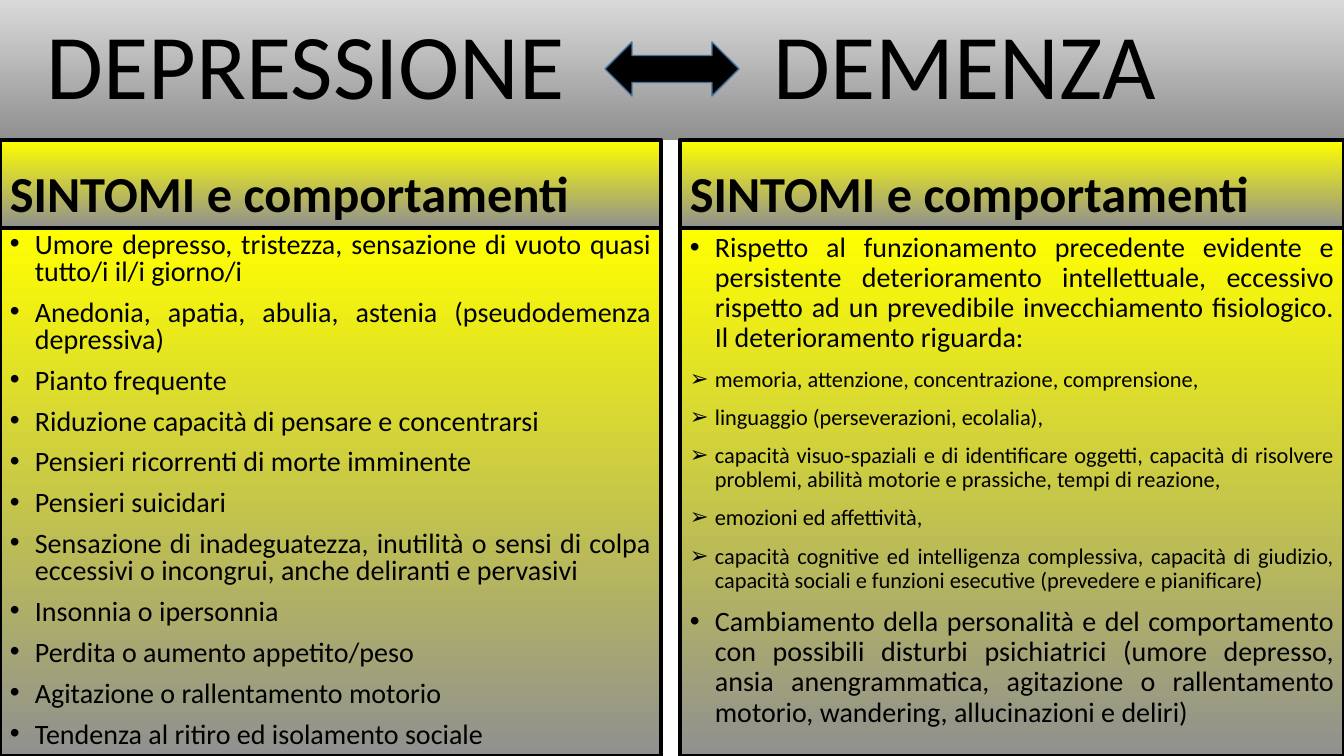
"""Build the slide that compares the symptoms of depression and dementia."""
from dataclasses import dataclass

from lxml.etree import SubElement
from pptx import Presentation
from pptx.dml.color import RGBColor
from pptx.enum.shapes import MSO_SHAPE
from pptx.enum.text import MSO_ANCHOR, MSO_AUTO_SIZE, PP_ALIGN
from pptx.oxml.ns import qn
from pptx.util import Emu, Pt

FONT = "Calibri"
BLACK = "000000"
GREY = "909090"
YELLOW = "FFFF00"
SLIDE_WIDTH, SLIDE_HEIGHT = 1344, 756
TITLE_HEIGHT = 140
HEADING_HEIGHT = 88
TITLE_START, TITLE_TAB = 47, 727
INDENT = 25


@dataclass(frozen=True)
class Item:
    """A bulleted line of a column."""

    text: str
    bullet: str = "•"
    size: int = 20


@dataclass(frozen=True)
class Column:
    """A heading with its list of items."""

    left: int
    width: int
    line_spacing: float
    items: tuple[Item, ...]
    heading: str = "SINTOMI e comportamenti"


def detail(text: str) -> Item:
    """Return a smaller item with an arrow bullet."""
    return Item(text, "➢", 16)


COLUMNS = (
    Column(0, 661, 0.8, (
        Item("Umore depresso, tristezza, sensazione di vuoto quasi tutto/i il/i giorno/i"),
        Item("Anedonia, apatia, abulia, astenia (pseudodemenza depressiva)"),
        Item("Pianto frequente"),
        Item("Riduzione capacità di pensare e concentrarsi"),
        Item("Pensieri ricorrenti di morte imminente"),
        Item("Pensieri suicidari"),
        Item("Sensazione di inadeguatezza, inutilità o sensi di colpa eccessivi "
             "o incongrui, anche deliranti e pervasivi"),
        Item("Insonnia o ipersonnia"),
        Item("Perdita o aumento appetito/peso"),
        Item("Agitazione o rallentamento motorio"),
        Item("Tendenza al ritiro ed isolamento sociale"),
    )),
    Column(680, 664, 0.9, (
        Item("Rispetto al funzionamento precedente evidente e persistente "
             "deterioramento intellettuale, eccessivo rispetto ad un prevedibile "
             "invecchiamento fisiologico. Il deterioramento riguarda:"),
        detail("memoria, attenzione, concentrazione, comprensione,"),
        detail("linguaggio (perseverazioni, ecolalia),"),
        detail("capacità visuo-spaziali e di identificare oggetti, capacità di risolvere "
               "problemi, abilità motorie e prassiche, tempi di reazione,"),
        detail("emozioni ed affettività,"),
        detail("capacità cognitive ed intelligenza complessiva, capacità di giudizio, "
               "capacità sociali e funzioni esecutive (prevedere e pianificare)"),
        Item("Cambiamento della personalità e del comportamento con possibili disturbi "
             "psichiatrici (umore depresso, ansia anengrammatica, agitazione o "
             "rallentamento motorio, wandering, allucinazioni e deliri)"),
    )),
)


def px(length: int) -> Emu:
    """Turn px into EMU."""
    return Emu(round(length * 914400 / 100.8))


def colour(value: str) -> RGBColor:
    """Turn a hex string into a colour."""
    return RGBColor.from_string(value)


def fill_gradient(shape, top: str, bottom: str) -> None:
    """Fill a shape with a gradient that runs downwards."""
    shape.fill.gradient()
    shape.fill.gradient_angle = 270
    for stop, value in zip(shape.fill.gradient_stops, (top, bottom)):
        stop.color.rgb = colour(value)


def prepare_frame(shape, anchor: MSO_ANCHOR) -> None:
    """Set wrapping, anchor and fixed size of a text frame."""
    frame = shape.text_frame
    frame.word_wrap = True
    frame.auto_size = MSO_AUTO_SIZE.NONE
    frame.vertical_anchor = anchor


def write(paragraph, text: str, *, size: int, bold: bool = False, spacing: float = 0.9,
          before: int = 10, align: PP_ALIGN = PP_ALIGN.LEFT, bullet: str = "") -> None:
    """Write formatted text into a paragraph."""
    paragraph.text = text
    paragraph.alignment = align
    paragraph.line_spacing = spacing
    paragraph.space_before = Pt(before)
    font = paragraph.font
    font.name, font.size, font.bold = FONT, Pt(size), bold
    font.color.rgb = colour(BLACK)
    for run in paragraph.runs:
        run.font.name, run.font.size, run.font.bold = FONT, Pt(size), bold
        run.font.color.rgb = colour(BLACK)
    if bullet:
        properties = paragraph._p.get_or_add_pPr()
        properties.set("marL", str(px(INDENT)))
        properties.set("indent", str(-px(INDENT)))
        font_element = properties.makeelement(qn("a:buFont"), {"typeface": "Arial"})
        character = properties.makeelement(qn("a:buChar"), {"char": bullet})
        properties.find(qn("a:spcBef")).addnext(font_element)
        font_element.addnext(character)


def add_panel(slide, left: int, top: int, width: int, height: int, anchor: MSO_ANCHOR):
    """Add a yellow panel with a black border."""
    panel = slide.shapes.add_shape(
        MSO_SHAPE.RECTANGLE, px(left), px(top), px(width), px(height))
    panel.shadow.inherit = False
    fill_gradient(panel, YELLOW, GREY)
    panel.line.color.rgb = colour(BLACK)
    panel.line.width = Pt(3)
    prepare_frame(panel, anchor)
    return panel


def add_column(slide, column: Column) -> None:
    """Add the heading panel and the list panel of a column."""
    heading = add_panel(slide, column.left, TITLE_HEIGHT, column.width, HEADING_HEIGHT,
                        MSO_ANCHOR.BOTTOM)
    write(heading.text_frame.paragraphs[0], column.heading, size=36, bold=True)
    top = TITLE_HEIGHT + HEADING_HEIGHT
    body = add_panel(slide, column.left, top, column.width, SLIDE_HEIGHT - top, MSO_ANCHOR.TOP)
    frame = body.text_frame
    for index, item in enumerate(column.items):
        paragraph = frame.add_paragraph() if index else frame.paragraphs[0]
        write(paragraph, item.text, size=item.size, spacing=column.line_spacing,
              align=PP_ALIGN.JUSTIFY, bullet=item.bullet)


def format_title(title) -> None:
    """Place the title band and set its two words apart with a tab stop."""
    title.left, title.top = px(0), px(0)
    title.width, title.height = px(SLIDE_WIDTH), px(TITLE_HEIGHT)
    fill_gradient(title, "D9D9D9", GREY)
    prepare_frame(title, MSO_ANCHOR.MIDDLE)
    title.text_frame.margin_left = px(TITLE_START)
    paragraph = title.text_frame.paragraphs[0]
    write(paragraph, "DEPRESSIONE\tDEMENZA", size=66, before=0)
    properties = paragraph._p.get_or_add_pPr()
    tabs = properties.makeelement(qn("a:tabLst"), {})
    SubElement(tabs, qn("a:tab"), {"pos": str(px(TITLE_TAB)), "algn": "l"})
    properties.find(qn("a:spcBef")).addnext(tabs)


def add_arrow(slide) -> None:
    """Add the double arrow between the words of the title."""
    arrow = slide.shapes.add_shape(
        MSO_SHAPE.LEFT_RIGHT_ARROW, px(605), px(42), px(134), px(54))
    arrow.shadow.inherit = False
    arrow.fill.solid()
    arrow.fill.fore_color.rgb = colour(BLACK)
    arrow.line.color.rgb = colour("43739E")
    arrow.line.width = Pt(1)


def main() -> None:
    """Build and save the presentation."""
    presentation = Presentation()
    presentation.slide_width, presentation.slide_height = px(SLIDE_WIDTH), px(SLIDE_HEIGHT)
    slide = presentation.slides.add_slide(presentation.slide_layouts.get_by_name("Title Only"))
    format_title(slide.shapes.title)
    for column in COLUMNS:
        add_column(slide, column)
    add_arrow(slide)
    presentation.save("out.pptx")


if __name__ == "__main__":
    main()
